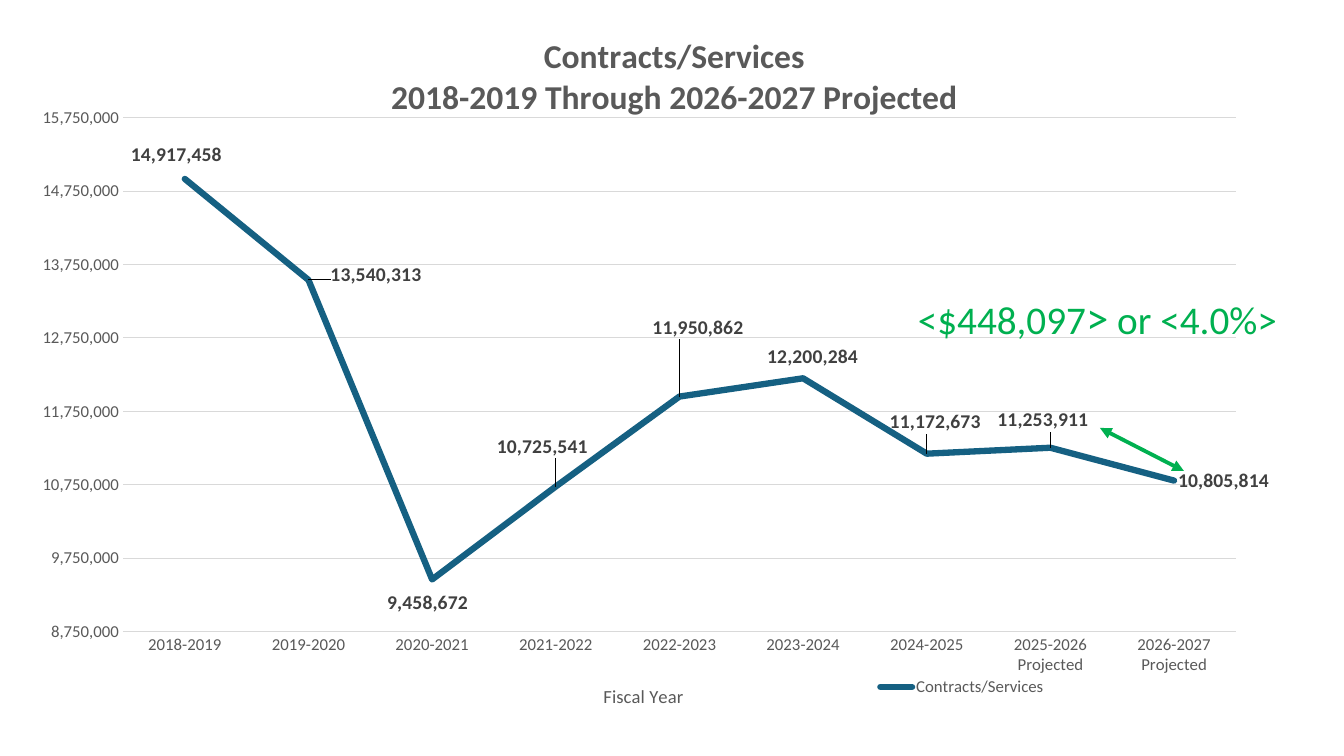
from lxml.etree import SubElement
from pptx import Presentation
from pptx.chart.data import CategoryChartData
from pptx.dml.color import RGBColor
from pptx.enum.chart import XL_CHART_TYPE, XL_LABEL_POSITION, XL_LEGEND_POSITION, XL_TICK_MARK
from pptx.enum.shapes import MSO_CONNECTOR
from pptx.enum.text import MSO_AUTO_SIZE
from pptx.oxml import parse_xml
from pptx.oxml.ns import nsdecls, qn
from pptx.util import Pt

PX = 914400 / 100.8
COLORS = {"text": "595959", "label": "404040", "grid": "D9D9D9",
          "series": "156082", "change": "00B050"}
FONT = "Calibri"

SPENDING = {
    "2018-2019": 14917458, "2019-2020": 13540313, "2020-2021": 9458672,
    "2021-2022": 10725541, "2022-2023": 11950862, "2023-2024": 12200284,
    "2024-2025": 11172673, "2025-2026 Projected": 11253911,
    "2026-2027 Projected": 10805814,
}
# Label shifts in px from the place right of each point; the last stays put
LABEL_SHIFTS = [(-58, -24), (18, -5), (-49, 24), (-63, -40),
                (-31, -70), (-40, -22), (-41, -32), (-57, -28)]


def px(length):
    return round(length * PX)


def color(name):
    return RGBColor.from_string(COLORS[name])


def style_font(font, size, color_name, bold=False):
    font.name, font.size, font.bold = FONT, Pt(size), bold
    font.color.rgb = color(color_name)


def style_line(line, width, color_name):
    line.width = Pt(width)
    line.color.rgb = color(color_name)


def set_layout(element, index, settings):
    """Give a chart part a manual layout, as its child number index."""
    for layout in element.findall(qn("c:layout")):
        element.remove(layout)
    parts = "".join(f'<c:{tag} val="{value}"/>' for tag, value in settings.items())
    element.insert(index, parse_xml(
        f'<c:layout {nsdecls("c")}><c:manualLayout>{parts}</c:manualLayout></c:layout>'))


def set_title(owner, lines, size, bold=False):
    owner.has_title = True
    title = owner.chart_title if hasattr(owner, "chart_title") else owner.axis_title
    title.text_frame.text = "\n".join(lines)
    for paragraph in title.text_frame.paragraphs:
        style_font(paragraph.font, size, "text", bold)


def add_labels(series):
    labels = series.data_labels
    labels.show_value = True
    labels.number_format, labels.number_format_is_linked = "#,##0", False
    labels.position = XL_LABEL_POSITION.RIGHT
    style_font(labels.font, 14, "label", True)
    for number in range(len(LABEL_SHIFTS)):
        label = series.points[number].data_label
        style_font(label.font, 14, "label", True)
        label.position = XL_LABEL_POSITION.RIGHT


def arrange_chart(chart, width, height):
    """Place the chart parts, in px from the chart's corner."""
    edge = {"xMode": "edge", "yMode": "edge"}

    def place(query, index, left, top, **extra):
        element = chart.element.xpath(query)[0]
        set_layout(element, index, {**extra.pop("before", {}), **edge,
                                    "x": left / width, "y": top / height, **extra})

    place("c:chart/c:plotArea", 0, 107, 111, before={"layoutTarget": "inner"},
          w=1113 / width, h=519 / height)
    place("c:chart/c:title", 1, 372, 25)
    place("//c:catAx/c:title", 1, 584, 679)
    place("c:chart/c:legend", 1, 856, 675, w=180 / width, h=22 / height)
    for label, (right, down) in zip(chart.element.xpath("//c:dLbl"), LABEL_SHIFTS):
        set_layout(label, 1, {"x": right / width, "y": down / height})


def add_spending_chart(slide, left, top, width, height):
    data = CategoryChartData(number_format="#,##0")
    data.categories = list(SPENDING)
    data.add_series("Contracts/Services", list(SPENDING.values()))
    chart = slide.shapes.add_chart(XL_CHART_TYPE.LINE, px(left), px(top),
                                   px(width), px(height), data).chart
    chart.font.name, chart.font.size = "Cabin", Pt(10)
    set_title(chart, ["Contracts/Services", "2018-2019 Through 2026-2027 Projected"], 24, True)

    # Axes
    for axis in (chart.category_axis, chart.value_axis):
        axis.major_tick_mark = axis.minor_tick_mark = XL_TICK_MARK.NONE
        style_font(axis.tick_labels.font, 12, "text")
    style_line(chart.category_axis.format.line, 0.75, "grid")
    set_title(chart.category_axis, ["Fiscal Year"], 13.3)
    values = chart.value_axis
    values.minimum_scale, values.maximum_scale = 8750000, 15750000
    values.major_unit = 1000000
    values.format.line.fill.background()
    style_line(values.major_gridlines.format.line, 0.75, "grid")
    values.tick_labels.number_format = "#,##0"
    values.tick_labels.number_format_is_linked = False

    # Legend
    chart.has_legend = True
    chart.legend.position = XL_LEGEND_POSITION.BOTTOM
    chart.legend.include_in_layout = False
    style_font(chart.legend.font, 12, "text")

    # Series
    plot = chart.plots[0]
    plot.vary_by_categories = False
    series = plot.series[0]
    series.smooth = False
    style_line(series.format.line, 4.5, "series")
    chart.element.xpath("//c:ser/c:spPr/a:ln")[0].set("cap", "rnd")
    add_labels(series)
    arrange_chart(chart, width, height)


def add_change_note(slide, left, top, width, height):
    # Change in dollars and percent
    box = slide.shapes.add_textbox(px(left), px(top), px(width), px(height))
    frame = box.text_frame
    frame.word_wrap = False
    frame.auto_size = MSO_AUTO_SIZE.SHAPE_TO_FIT_TEXT
    paragraph = frame.paragraphs[0]
    for text, size in (("<$448,097", 28), (">", 32), (" or <4.0%>", 28)):
        run = paragraph.add_run()
        run.text = text
        style_font(run.font, size, "change")

    # Arrow between the last two years
    arrow = slide.shapes.add_connector(
        MSO_CONNECTOR.STRAIGHT, px(left + 192), px(top + 143), px(left + 276), px(top + 186))
    style_line(arrow.line, 2.75, "change")
    properties = arrow.element.spPr
    outline = properties.find(qn("a:ln"))
    for end in ("a:headEnd", "a:tailEnd"):
        SubElement(outline, qn(end), type="triangle")
    SubElement(properties, qn("a:effectLst"))


def main():
    presentation = Presentation()
    presentation.slide_width, presentation.slide_height = px(1344), px(756)
    slide = presentation.slides.add_slide(presentation.slide_layouts[6])
    add_spending_chart(slide, 16, 8, 1308, 706)
    add_change_note(slide, 908, 285, 385, 65)
    presentation.save("out.pptx")


if __name__ == "__main__":
    main()
